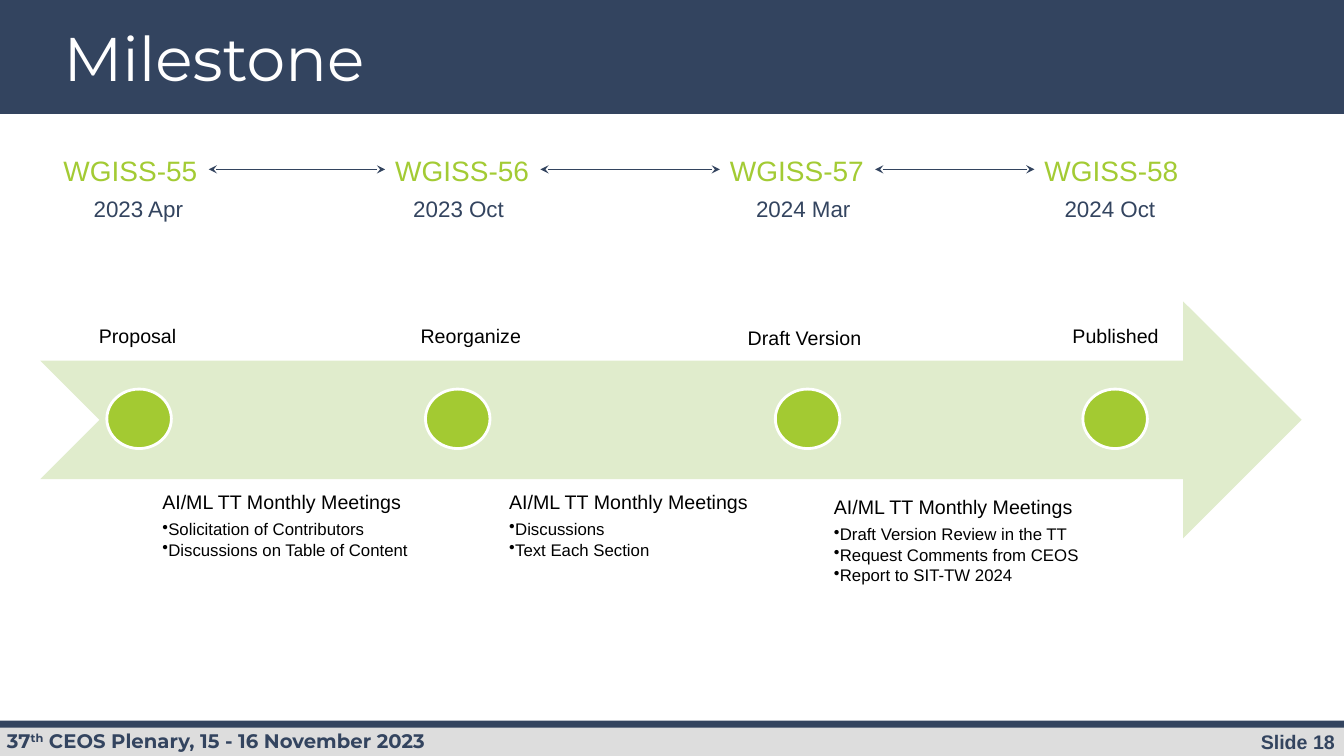
from dataclasses import dataclass

from pptx import Presentation
from pptx import util as u
from pptx.dml.color import RGBColor
from pptx.enum import shapes, text
from pptx.oxml.ns import qn
from lxml import etree


@dataclass(frozen=True)
class Theme:
    navy: str = "33445F"
    grey: str = "DDDDDD"
    pale: str = "E0ECCC"
    green: str = "A3CA32"
    lime: str = "A3CB34"
    white: str = "FFFFFF"
    black: str = "000000"
    heading_font: str = "Montserrat"
    body_font: str = "Arial"
    title_size: int = 44
    meeting_size: int = 20
    date_size: int = 16
    label_size: int = 14
    bullet_size: int = 12


THEME = Theme()
WIDE_MARGINS = (0.11, 0.11, 0.11, 0.11)
PLAIN_MARGINS = (0.1, 0.05, 0.1, 0.05)


def apply(target, values):
    for name, value in values.items():
        setattr(target, name, value)


class Painter:
    def __init__(self, deck, theme):
        self.theme = theme
        self.page = deck.slides.add_slide(deck.slide_layouts[5])

    def shape(self, kind, at, fill, outline=None):
        item = self.page.shapes.add_shape(kind, *map(u.Inches, at))
        item.shadow.inherit = False
        item.fill.solid()
        item.fill.fore_color.rgb = RGBColor.from_string(fill)
        if outline:
            item.line.color.rgb = RGBColor.from_string(outline)
            item.line.width = u.Pt(2)
        else:
            item.line.fill.background()
        return item

    def frame(self, box, margins, anchor=text.MSO_ANCHOR.TOP, wrap=True):
        left, top, right, bottom = map(u.Inches, margins)
        apply(box.text_frame, {
            "margin_left": left, "margin_top": top,
            "margin_right": right, "margin_bottom": bottom,
            "word_wrap": wrap, "vertical_anchor": anchor,
            "auto_size": text.MSO_AUTO_SIZE.NONE})

    def span(self, para, words, size, color, font=None, bold=False):
        span = para.add_run()
        span.text = words
        apply(span.font, {"size": u.Pt(size), "bold": bold,
                          "name": font or self.theme.body_font})
        span.font.color.rgb = RGBColor.from_string(color)
        return span

    def label(self, at, words, size, color, margins=PLAIN_MARGINS,
              anchor=text.MSO_ANCHOR.TOP, wrap=True, bold=False, **layout):
        box = self.page.shapes.add_textbox(*map(u.Inches, at))
        self.frame(box, margins, anchor, wrap)
        para = box.text_frame.paragraphs[0]
        apply(para, layout)
        self.span(para, words, size, color, bold=bold)
        return box

    def title(self, at, words):
        box = self.page.shapes.title
        left, top, width, height = map(u.Inches, at)
        apply(box, {"left": left, "top": top, "width": width, "height": height})
        self.frame(box, PLAIN_MARGINS, text.MSO_ANCHOR.MIDDLE)
        para = box.text_frame.paragraphs[0]
        apply(para, {"alignment": text.PP_ALIGN.LEFT, "line_spacing": 0.9})
        self.span(para, words, self.theme.title_size, self.theme.white,
                  self.theme.heading_font)
        box._element.getparent().append(box._element)

    def footer(self, at, pieces):
        box = self.page.shapes.add_textbox(*map(u.Inches, at))
        self.frame(box, PLAIN_MARGINS)
        for words, baseline in pieces:
            span = self.span(box.text_frame.paragraphs[0], words,
                             self.theme.label_size, self.theme.navy,
                             self.theme.heading_font, True)
            if baseline:
                span._r.get_or_add_rPr().set("baseline", str(baseline))

    def activity(self, at, heading, bullets):
        box = self.label(at, heading, self.theme.label_size, self.theme.black,
                         WIDE_MARGINS, line_spacing=0.9)
        for index, words in enumerate(bullets):
            para = box.text_frame.add_paragraph()
            props = para._p.get_or_add_pPr()
            props.set("marL", str(u.Inches(0.06)))
            props.set("indent", str(u.Inches(-0.08)))
            color = etree.SubElement(props, qn("a:buClr"))
            etree.SubElement(color, qn("a:srgbClr"), val=self.theme.black)
            etree.SubElement(props, qn("a:buChar"), char="•")
            apply(para, {"level": 1, "line_spacing": 0.9,
                         "space_before": u.Pt(1.8 if index else 4.9)})
            self.span(para, words, self.theme.bullet_size, self.theme.black)

    def double_arrow(self, start, end, y):
        arrow = self.page.shapes.add_connector(
            shapes.MSO_CONNECTOR.STRAIGHT, *map(u.Inches, (start, y, end, y)))
        arrow.line.color.rgb = RGBColor.from_string(self.theme.navy)
        arrow.line.width = u.Pt(0.75)
        props = arrow._element.spPr
        for tip in ("a:headEnd", "a:tailEnd"):
            etree.SubElement(props.find(qn("a:ln")), qn(tip), type="stealth")
        etree.SubElement(props, qn("a:effectLst"))


MEETING_WIDTH = 1.54
MEETINGS = [
    ("WGISS-55", 0.53, "2023 Apr", 0.83),
    ("WGISS-56", 3.82, "2023 Oct", 4),
    ("WGISS-57", 7.14, "2024 Mar", 7.4),
    ("WGISS-58", 10.26, "2024 Oct", 10.46),
]
STAGES = [
    ("Proposal", 0.78, 1.21, 1.17, 1.06),
    ("Reorganize", 3.96, 1.21, 1.42, 4.22),
    ("Draft Version", 7.3, 1.23, 1.36, 7.69),
    ("Published", 10.48, 1.21, 1.17, 10.74),
]
ACTIVITIES = [
    ((1.5, 4.78, 2.76, 0.85),
     ["Solicitation of Contributors", "Discussions on Table of Content"]),
    ((4.94, 4.78, 2.76, 0.9), ["Discussions", "Text Each Section"]),
    ((8.16, 4.83, 2.91, 1.23),
     ["Draft Version Review in the TT", "Request Comments from CEOS",
      "Report to SIT-TW 2024"]),
]


def main():
    deck = Presentation()
    apply(deck, {"slide_width": u.Inches(13.33), "slide_height": u.Inches(7.5)})
    painter = Painter(deck, THEME)
    kinds = shapes.MSO_SHAPE

    for at, fill in [((0, 0, 13.33, 1.13), THEME.navy),
                     ((0, 7.19, 13.33, 0.31), THEME.grey),
                     ((0, 7.15, 13.33, 0.07), THEME.navy)]:
        painter.shape(kinds.RECTANGLE, at, fill)
    painter.title((0.53, 0.19, 9.93, 0.85), "Milestone")
    painter.label((11.23, 7.19, 2.11, 0.34), "Slide 18", THEME.label_size,
                  THEME.navy, bold=True, alignment=text.PP_ALIGN.RIGHT)
    painter.footer((-0.03, 7.18, 5.39, 0.34),
                   [("37", 0), ("th", 30000),
                    (" CEOS Plenary, 15 - 16 November 2023", 0)])

    painter.shape(kinds.NOTCHED_RIGHT_ARROW, (0.4, 2.99, 12.51, 2.35), THEME.pale)
    for name, left, top, width, dot_left in STAGES:
        painter.label((left, top, width, 2.35), name, THEME.label_size,
                      THEME.black, WIDE_MARGINS, text.MSO_ANCHOR.BOTTOM,
                      alignment=text.PP_ALIGN.CENTER, line_spacing=0.9)
        painter.shape(kinds.OVAL, (dot_left, 3.86, 0.64, 0.59),
                      THEME.green, THEME.white)
    for at, bullets in ACTIVITIES:
        painter.activity(at, "AI/ML TT Monthly Meetings", bullets)

    for name, left, date, date_left in MEETINGS:
        painter.label((left, 1.47, MEETING_WIDTH, 0.44), name,
                      THEME.meeting_size, THEME.lime, wrap=False)
        painter.label((date_left, 1.89, 1.15, 0.37), date,
                      THEME.date_size, THEME.navy, wrap=False)
    for before, after in zip(MEETINGS, MEETINGS[1:]):
        painter.double_arrow(before[1] + MEETING_WIDTH, after[1], 1.68)

    deck.save("out.pptx")


if __name__ == "__main__":
    main()
